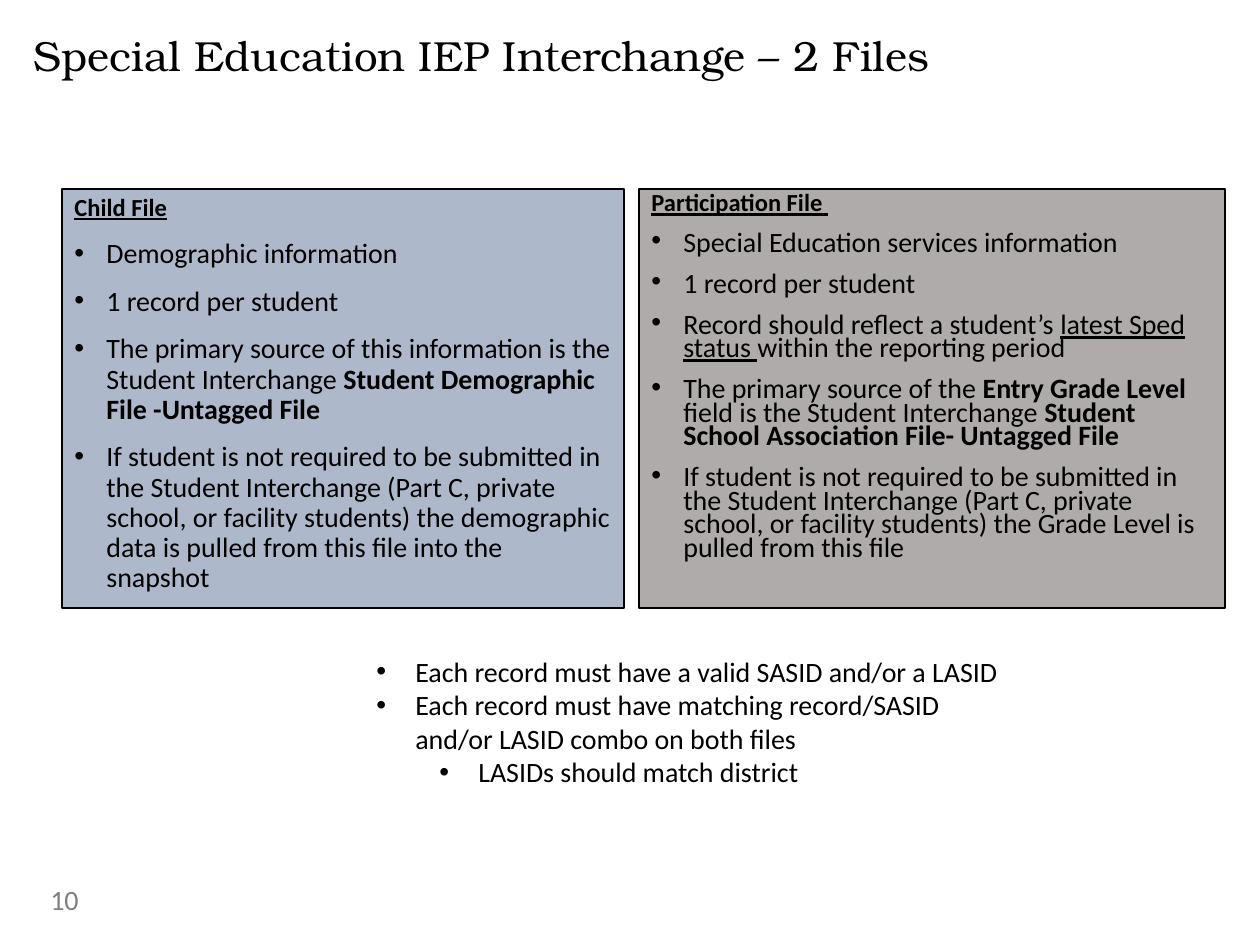
from pptx import Presentation
from pptx.dml.color import RGBColor
from pptx.enum.shapes import MSO_SHAPE as Shape
from pptx.enum.text import MSO_ANCHOR as Anchor, MSO_AUTO_SIZE as Fit, PP_ALIGN as Align
from pptx.oxml.ns import qn
from pptx.util import Emu, Pt
from lxml.etree import SubElement

COLORS = {"ink": "000000", "blue": "ADB9CA", "gray": "AFABAB", "page": "808080"}
BODY = "Calibri"
SERIF = "TeX Gyre Bonum"

CHILD = [
    [("Demographic information", "")],
    [("1 record per student", "")],
    [("The primary source of this information is the Student Interchange ", ""),
     ("Student Demographic File -Untagged File", "b")],
    [("If student is not required to be submitted in the Student Interchange "
      "(Part C, private school, or facility students) the demographic data is "
      "pulled from this file into the snapshot", "")],
]
PART = [
    [("Special Education services information", "")],
    [("1 record per student", "")],
    [("Record should reflect a student’s ", ""), ("latest Sped status ", "u"),
     ("within the reporting period", "")],
    [("The primary source of the ", ""), ("Entry Grade Level ", "b"),
     ("field is the Student Interchange ", ""),
     ("Student School Association File- Untagged File", "b")],
    [("If student is not required to be submitted in the Student Interchange "
      "(Part C, private school, or facility students) the Grade Level is "
      "pulled from this file", "")],
]
NOTES = [
    ("Each record must have a valid SASID and/or a LASID", 0),
    ("Each record must have matching record/SASID and/or LASID combo on both files", 0),
    ("LASIDs should match district", 1),
]


def px(n):
    """Turn px into EMU."""
    return Emu(round(n * 914400 / 126))


def color(name):
    """Look up a colour by name."""
    return RGBColor.from_string(COLORS[name])


def style(run, size, mark="", face=BODY, tint="ink"):
    """Format one run; mark may hold b for bold and u for underline."""
    font = run.font
    font.name, font.size = face, Pt(size)
    font.bold, font.underline = "b" in mark, "u" in mark
    font.color.rgb = color(tint)


def bullet(para, left, hang):
    """Give a paragraph a round bullet with a hanging indent."""
    props = para._p.get_or_add_pPr()
    props.set("marL", str(px(left)))
    props.set("indent", str(-px(hang)))
    SubElement(props, qn("a:buFont"), typeface="Arial")
    SubElement(props, qn("a:buChar"), char="•")


def fill(para, parts, size):
    """Write styled parts into a paragraph."""
    for text, mark in parts:
        run = para.add_run()
        run.text = text
        style(run, size, mark)


def title(slide, text):
    """Place and format the title."""
    shape = slide.shapes.title
    shape.left, shape.top, shape.width, shape.height = px(34), px(35), px(916), px(105)
    frame = shape.text_frame
    frame.text = text
    frame.word_wrap, frame.auto_size = True, Fit.NONE
    frame.vertical_anchor = Anchor.TOP
    frame.margin_left = frame.margin_top = frame.margin_right = frame.margin_bottom = 0
    para = frame.paragraphs[0]
    para.alignment, para.line_spacing = Align.LEFT, 0.9
    style(para.runs[0], 24, face=SERIF)


def panel(slide, left, width, tint, head, items, lead):
    """Draw a filled panel with a heading and bullets."""
    shape = slide.shapes.add_shape(Shape.RECTANGLE, px(left), px(189), px(width), px(419))
    shape.shadow.inherit = False
    shape.fill.solid()
    shape.fill.fore_color.rgb = color(tint)
    shape.line.color.rgb = color("ink")
    shape.line.width = Pt(0.75)
    frame = shape.text_frame
    frame.word_wrap, frame.vertical_anchor = True, Anchor.TOP
    para = frame.paragraphs[0]
    para.alignment, para.line_spacing = Align.LEFT, lead
    fill(para, [(head, "bu")], 14)
    for parts in items:
        para = frame.add_paragraph()
        para.alignment, para.line_spacing = Align.LEFT, lead
        para.space_before = Pt(10)
        bullet(para, 32, 32)
        fill(para, parts, 16)


def label(slide, left, top, width, height):
    """Add a wrapping text box and return its frame."""
    frame = slide.shapes.add_textbox(px(left), px(top), px(width), px(height)).text_frame
    frame.word_wrap = True
    return frame


def notes(slide, items):
    """List the rules shared by both files."""
    frame = label(slide, 364, 648, 670, 147)
    for i, (text, level) in enumerate(items):
        para = frame.add_paragraph() if i else frame.paragraphs[0]
        para.level = level
        bullet(para, 39 + 63 * level, 39)
        fill(para, [(text, "")], 16)


def number(slide, text):
    """Write the page number."""
    frame = label(slide, 38, 876, 64, 50)
    frame.text = text
    style(frame.paragraphs[0].runs[0], 16, tint="page")


def main():
    """Build and save the slide."""
    deck = Presentation()
    deck.slide_width, deck.slide_height = px(1260), px(945)
    slide = deck.slides.add_slide(deck.slide_layouts[5])
    title(slide, "Special Education IEP Interchange – 2 Files")
    panel(slide, 62, 562, "blue", "Child File", CHILD, 0.9)
    panel(slide, 639, 586, "gray", "Participation File ", PART, 0.7)
    notes(slide, NOTES)
    number(slide, "10")
    deck.save("out.pptx")


if __name__ == "__main__":
    main()
